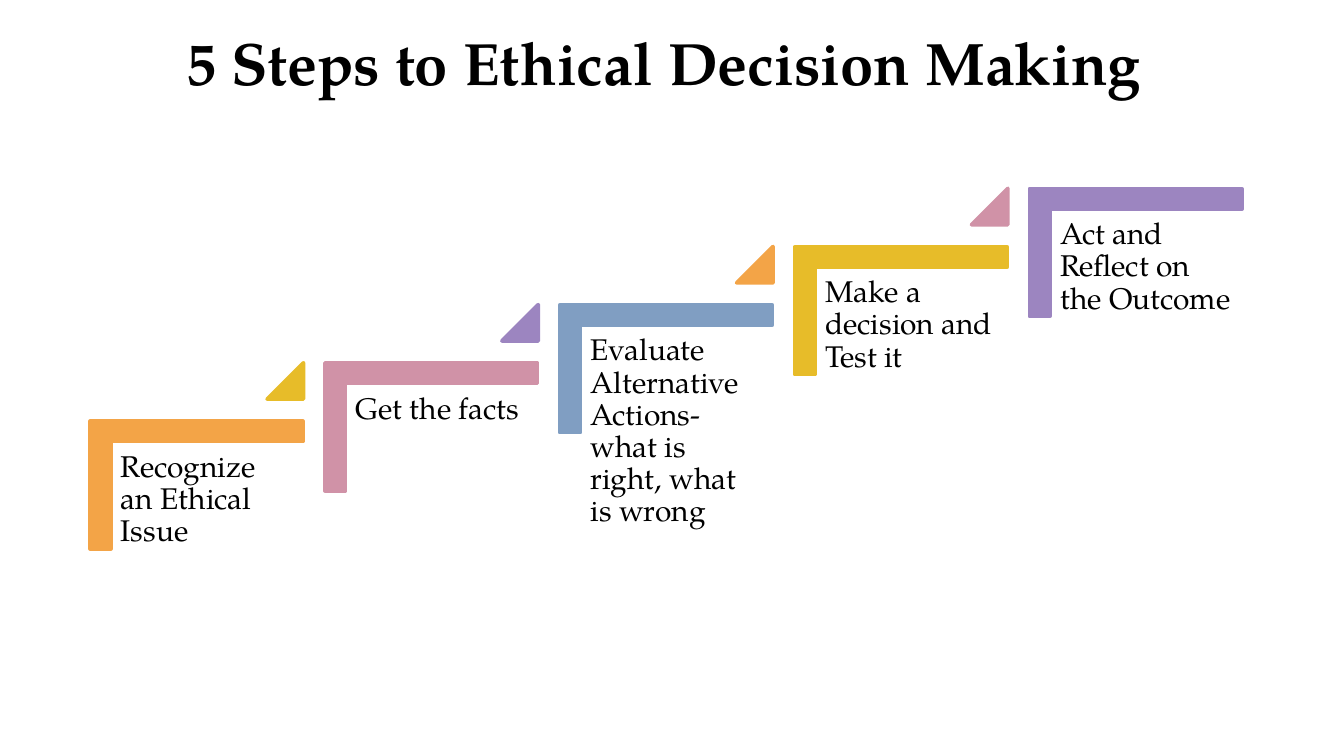
"""Build a slide with five rising steps to ethical decision making."""
import pptx
import pptx.util
import pptx.dml.color
import pptx.enum.shapes
import pptx.enum.text

THEME = {
    "font": "TeX Gyre Pagella",
    "text": "000000",
    "title_size": 32,
    "step_size": 16,
    "line_width": 2,
    "inset": 0.07,
    "steps": ["F3A447", "D092A7", "809EC2", "E7BC29", "9C85C0"],
}
STEPS = [
    "Recognize an Ethical Issue",
    "Get the facts",
    "Evaluate Alternative Actions- what is right, what is wrong",
    "Make a decision and Test it",
    "Act and Reflect on the Outcome",
]
STEP_COLUMNS = 17.47
STEP_ROWS = 7.69

presentation = pptx.Presentation()
presentation.slide_width = pptx.util.Inches(10)
presentation.slide_height = presentation.slide_width * 9 // 16
slide = presentation.slides.add_slide(presentation.slide_layouts[6])
column = presentation.slide_width / 100
row = presentation.slide_height / 100


def add_text(text, left, top, width, height, size):
    box = slide.shapes.add_textbox(
        int(left * column), int(top * row), int(width * column), int(height * row)
    )
    box.text_frame.word_wrap = True
    paragraph = box.text_frame.paragraphs[0]
    paragraph.text = text
    paragraph.font.name = THEME["font"]
    paragraph.font.size = pptx.util.Pt(size)
    paragraph.font.color.rgb = pptx.dml.color.RGBColor.from_string(THEME["text"])
    return box.text_frame


def add_figure(kind, left, top, width, height, color, adjustments):
    shape = slide.shapes.add_shape(
        kind, int(left * column), int(top * row), int(width * column), int(height * row)
    )
    shape.shadow.inherit = False
    for position, value in enumerate(adjustments):
        shape.adjustments[position] = value
    shape.fill.solid()
    shape.fill.fore_color.rgb = pptx.dml.color.RGBColor.from_string(color)
    shape.line.color.rgb = pptx.dml.color.RGBColor.from_string(color)
    shape.line.width = pptx.util.Pt(THEME["line_width"])
    return shape


title = add_text("5 Steps to Ethical Decision Making ", 0, 0.53, 100, 15.11, THEME["title_size"])
title.vertical_anchor = pptx.enum.text.MSO_ANCHOR.MIDDLE
title.paragraphs[0].alignment = pptx.enum.text.PP_ALIGN.CENTER
title.paragraphs[0].font.bold = True

for index, step in enumerate(STEPS):
    across = index * STEP_COLUMNS
    rise = index * STEP_ROWS
    colors = THEME["steps"]

    corner = add_figure(
        pptx.enum.shapes.MSO_SHAPE.CORNER,
        9.87 + across, 50.1 - rise, 9.5, 28.11, colors[index], [0.16, 0.16],
    )
    corner.rotation = 90

    frame = add_text(step, 8.3 + across, 58.46 - rise, 14.3, 22.22, THEME["step_size"])
    frame.margin_left = frame.margin_right = pptx.util.Inches(THEME["inset"])
    frame.margin_top = frame.margin_bottom = pptx.util.Inches(THEME["inset"])
    frame.paragraphs[0].line_spacing = 0.9

    if index < len(STEPS) - 1:
        add_figure(
            pptx.enum.shapes.MSO_SHAPE.ISOSCELES_TRIANGLE,
            19.88 + across, 48 - rise, 2.7, 4.8, colors[(index + 3) % len(colors)], [1],
        )

presentation.save("out.pptx")
